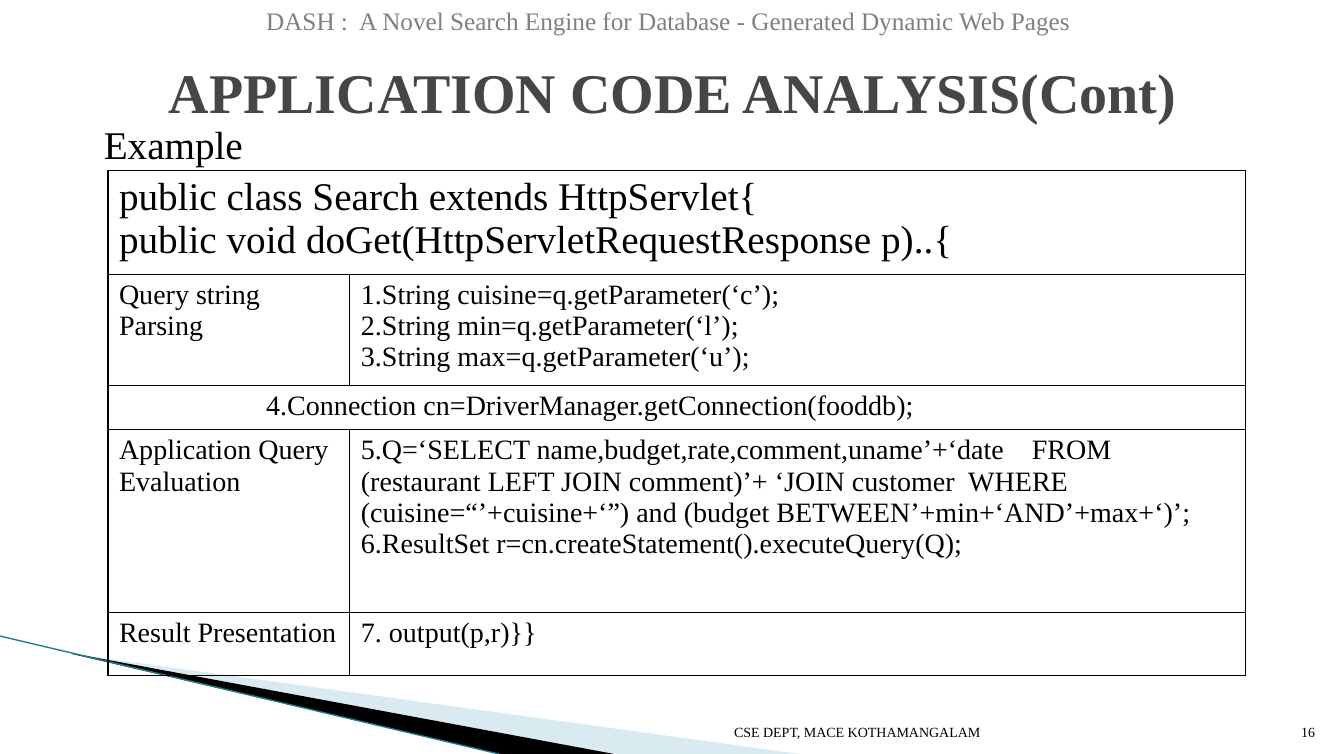
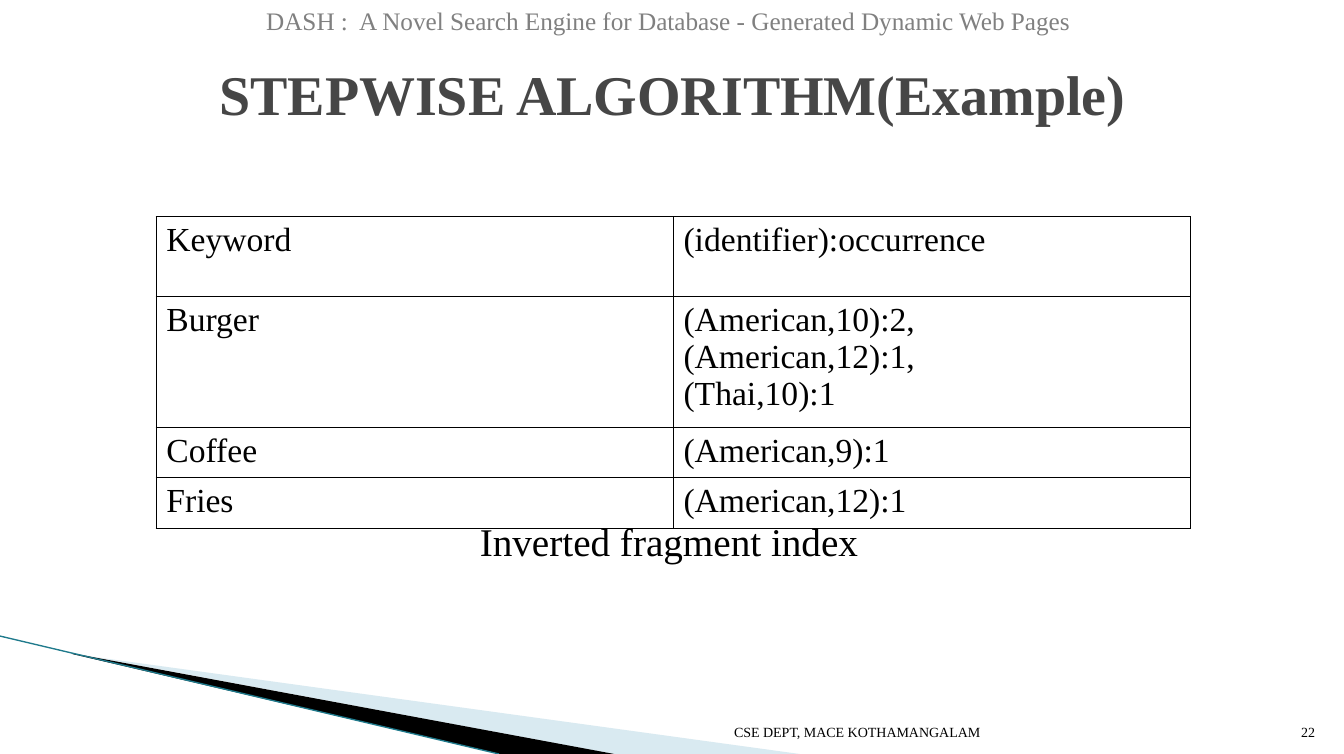
from dataclasses import dataclass
from typing import NamedTuple

from lxml.etree import SubElement as Sub
from pptx import Presentation
from pptx.dml.color import RGBColor as Rgb
from pptx.enum.shapes import MSO_CONNECTOR as Link
from pptx.enum.text import MSO_ANCHOR as Anchor, MSO_AUTO_SIZE as Fit, PP_ALIGN as Align
from pptx.oxml.ns import qn
from pptx.util import Inches, Pt

WIDE, HIGH = Inches(13.33), Inches(7.48)


@dataclass(frozen=True)
class Theme:
    font: str = "Times New Roman"
    ink: str = "000000"
    title: str = "464646"
    head: str = "808080"
    pale: str = "A0CBDC"
    edge: str = "1F7A8C"
    big: int = 40
    large: int = 28
    mid: int = 24
    body: int = 20
    top: int = 18
    small: int = 10


class Box(NamedTuple):
    """Place and size in percent of the slide."""
    x: float
    y: float
    w: float
    h: float

    def emu(self):
        return across(self.x), down(self.y), across(self.w), down(self.h)


class Cell(NamedTuple):
    lines: list[str]
    size: int
    span: int = 1
    left: float = 0.11


class Grid(NamedTuple):
    x: float
    y: float
    cols: list[float]
    rows: list[float]
    cells: list[list[Cell]]


class Wedge(NamedTuple):
    points: list[tuple[float, float]]
    color: str
    alpha: int


class Page(NamedTuple):
    title: str
    top: float
    number: str
    label: str
    place: Box
    grid: Grid


T = Theme()
HEAD = "DASH :  A Novel Search Engine for Database - Generated Dynamic Web Pages"
FOOT = "CSE DEPT, MACE KOTHAMANGALAM"
WEDGES = [
    Wedge([(5.48, 86.76), (59.49, 100), (45.61, 100), (5.48, 86.63)], T.pale, 40),
    Wedge([(5.33, 86.63), (45.69, 100), (37.21, 100), (5.4, 86.76)], T.ink, 100),
]


def across(share: float) -> int:
    return round(WIDE * share / 100)


def down(share: float) -> int:
    return round(HIGH * share / 100)


def write(frame, *lines: str, size: int, color: str = T.ink, bold: bool = False,
          align=Align.LEFT, anchor=Anchor.TOP, wrap: bool = True) -> None:
    """Fill a text frame, one paragraph a line."""
    frame.word_wrap = wrap
    frame.vertical_anchor = anchor
    for i, line in enumerate(lines):
        para = frame.paragraphs[0] if i == 0 else frame.add_paragraph()
        para.alignment = align
        run = para.add_run()
        run.text = line
        font = run.font
        font.name, font.size, font.bold = T.font, Pt(size), bold
        font.color.rgb = Rgb.from_string(color)


def label(slide, box: Box, text: str, **style) -> None:
    write(slide.shapes.add_textbox(*box.emu()).text_frame, text, **style)


def wedge(slide, part: Wedge) -> None:
    first, *rest = [(across(x), down(y)) for x, y in part.points]
    pen = slide.shapes.build_freeform(*first)
    pen.add_line_segments(rest, close=True)
    shape = pen.convert_to_shape()
    shape.shadow.inherit = False
    shape.line.fill.background()
    shape.fill.solid()
    shape.fill.fore_color.rgb = Rgb.from_string(part.color)
    if part.alpha < 100:
        tint = shape._element.spPr.find(".//" + qn("a:srgbClr"))
        Sub(tint, qn("a:alpha"), val=str(part.alpha * 1000))


def base(slide, number: str) -> None:
    """Corner wedges, running head and footer."""
    for part in WEDGES:
        wedge(slide, part)
    line = slide.shapes.add_connector(
        Link.STRAIGHT, 0, down(84.36), across(37.13), down(100))
    line.line.color.rgb = Rgb.from_string(T.edge)
    line.line.width = Pt(0.95)
    Sub(line._element.spPr, qn("a:effectLst"))
    label(slide, Box(18.75, 0, 61.97, 5.35), HEAD, size=T.top, color=T.head,
          align=Align.CENTER, wrap=False)
    for x, w, text in ((47.94, 25.73, FOOT), (94.6, 3.98, number)):
        label(slide, Box(x, 93.45, w, 5.35), text, size=T.small,
              align=Align.RIGHT, anchor=Anchor.BOTTOM)


def border(cell) -> None:
    props = cell._tc.get_or_add_tcPr()
    for side in ("lnL", "lnR", "lnT", "lnB"):
        line = Sub(props, qn("a:" + side), w=str(Pt(1)))
        fill = Sub(line, qn("a:solidFill"))
        Sub(fill, qn("a:srgbClr"), val=T.ink)


def table(slide, grid: Grid) -> None:
    box = Box(grid.x, grid.y, sum(grid.cols), sum(grid.rows))
    made = slide.shapes.add_table(len(grid.rows), len(grid.cols), *box.emu()).table
    made.first_row = made.horz_banding = False
    for col, share in zip(made.columns, grid.cols):
        col.width = across(share)
    for row, share in zip(made.rows, grid.rows):
        row.height = down(share)
    for cell in made.iter_cells():
        border(cell)
        cell.fill.background()
    for r, row in enumerate(grid.cells):
        for c, item in enumerate(row):
            cell = made.cell(r, c)
            if item.span > 1:
                cell.merge(made.cell(r, c + item.span - 1))
            cell.margin_left, cell.margin_right = Inches(item.left), Inches(0.11)
            write(cell.text_frame, *item.lines, size=item.size)


def page(deck, data: Page) -> None:
    slide = deck.slides.add_slide(deck.slide_layouts[5])
    base(slide, data.number)
    title = slide.shapes.title
    title.left, title.top, title.width, title.height = Box(
        5.03, data.top, 90.02, 16.71).emu()
    title.text_frame.auto_size = Fit.NONE
    write(title.text_frame, data.title, size=T.big, color=T.title, bold=True,
          align=Align.CENTER, anchor=Anchor.MIDDLE)
    table(slide, data.grid)
    label(slide, data.place, data.label, size=T.large, align=Align.CENTER, wrap=False)


def code(*lines: str, **more) -> Cell:
    return Cell(list(lines), **{"size": T.body, **more})


def term(*lines: str) -> Cell:
    return Cell(list(lines), T.mid, left=0.1)


# Code listing, split by stage
CODE = Grid(8.03, 22.59, [18, 66.62], [13.37, 14.71, 5.88, 24.2, 8.42], [
    [code("public class Search extends HttpServlet{",
          "public void doGet(HttpServletRequestResponse p)..{", size=T.large, span=2)],
    [code("Query string", "Parsing"),
     code("1.String cuisine=q.getParameter(‘c’);",
          "2.String min=q.getParameter(‘l’);",
          "3.String max=q.getParameter(‘u’);")],
    [code("4.Connection cn=DriverManager.getConnection(fooddb);", span=2, left=1.57)],
    [code("Application Query  Evaluation"),
     code("5.Q=‘SELECT name,budget,rate,comment,uname’+‘date    FROM "
          "(restaurant LEFT JOIN comment)’+ ‘JOIN customer  WHERE "
          "(cuisine=“’+cuisine+‘”) and (budget BETWEEN’+min+‘AND’+max+‘)’;",
          "6.ResultSet r=cn.createStatement().executeQuery(Q);")],
    [code("Result Presentation"), code("7. output(p,r)}}")],
])

# Keyword index
INDEX = Grid(11.63, 28.74, [38.48] * 2, [10.56, 17.38, 6.68, 6.68], [
    [term("Keyword"), term("(identifier):occurrence")],
    [term("Burger"), term("(American,10):2,", "(American,12):1,", "(Thai,10):1")],
    [term("Coffee"), term("(American,9):1")],
    [term("Fries"), term("(American,12):1")],
])

PAGES = [
    Page("APPLICATION CODE ANALYSIS(Cont)", 3.74, "16", "Example",
         Box(6.9, 15.24, 12, 7.62), CODE),
    Page("STEPWISE ALGORITHM(Example)", 4.01, "22", "Inverted fragment index",
         Box(34.81, 67.91, 29.93, 7.62), INDEX),
]


def main() -> None:
    deck = Presentation()
    deck.slide_width, deck.slide_height = WIDE, HIGH
    for data in PAGES:
        page(deck, data)
    deck.save("out.pptx")


if __name__ == "__main__":
    main()
